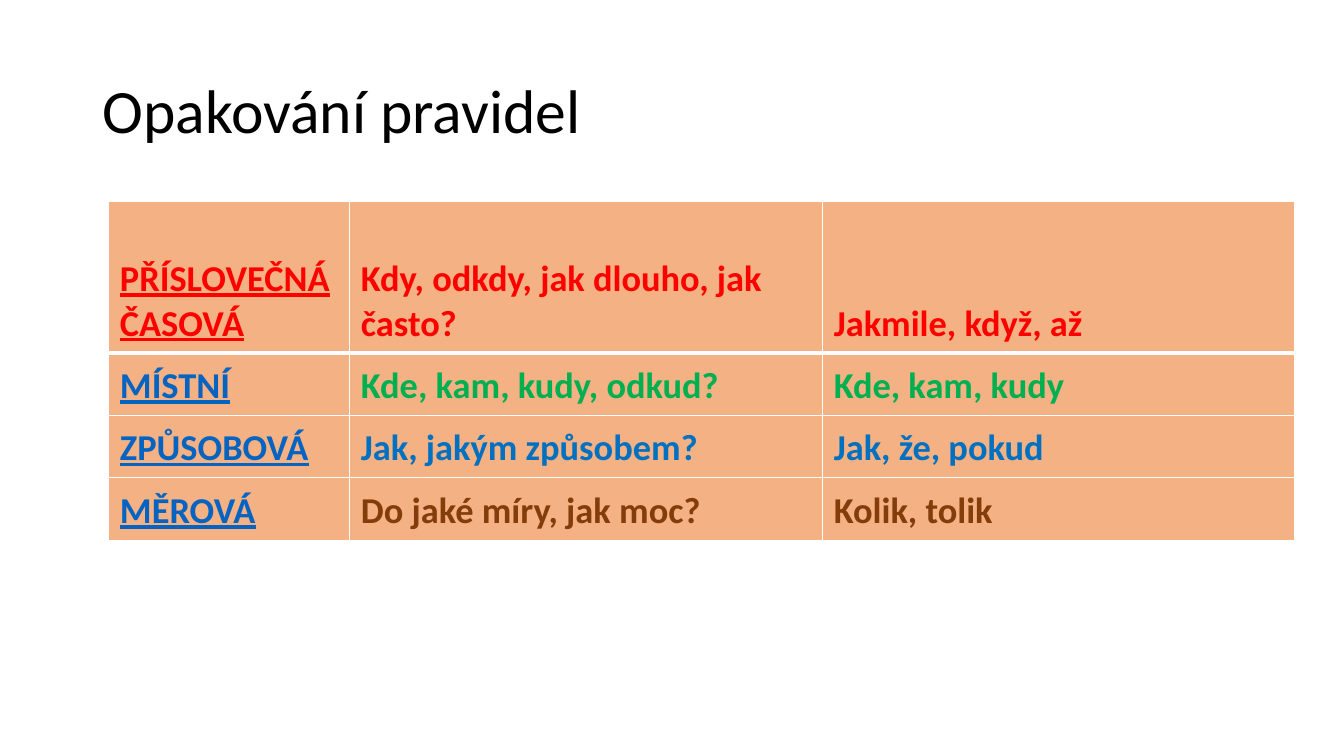
import pptx
import pptx.dml.color
import pptx.enum.text
import pptx.oxml.ns
import pptx.util
import lxml.etree

PX = 9144
THEME = {
    "font": "Calibri",
    "title_size": 44,
    "table_size": 26,
    "title": "000000",
    "cell": "F4B183",
    "border": "FFFFFF",
    "time": "FF0000",
    "link": "0563C1",
    "place": "00B050",
    "manner": "0070C0",
    "degree": "843C0B",
}
RULES = [
    ("PŘÍSLOVEČNÁ\nČASOVÁ", "Kdy, odkdy, jak dlouho, jak často?", "Jakmile, když, až", "time", "time"),
    ("MÍSTNÍ", "Kde, kam, kudy, odkud?", "Kde, kam, kudy", "link", "place"),
    ("ZPŮSOBOVÁ", "Jak, jakým způsobem?", "Jak, že, pokud", "link", "manner"),
    ("MĚROVÁ", "Do jaké míry, jak moc?", "Kolik, tolik", "link", "degree"),
]
COLUMN_WIDTHS = [239, 469, 468]
ROW_HEIGHTS = [150, 62, 62, 62]
MARGINS = {"margin_left": 11, "margin_top": 7, "margin_right": 11, "margin_bottom": 7}


def write_text(text_frame, text, color, **format_values):
    text_frame.text = text
    for paragraph in text_frame.paragraphs:
        font = paragraph.runs[0].font
        font.color.rgb = pptx.dml.color.RGBColor.from_string(THEME[color])
        for name, value in {"name": THEME["font"], **format_values}.items():
            setattr(font, name, value)


def add_border(cell, side, points):
    properties = cell._tc.get_or_add_tcPr()
    line = lxml.etree.SubElement(properties, pptx.oxml.ns.qn("a:" + side), w=str(pptx.util.Pt(points)))
    fill = lxml.etree.SubElement(line, pptx.oxml.ns.qn("a:solidFill"))
    lxml.etree.SubElement(fill, pptx.oxml.ns.qn("a:srgbClr"), val=THEME["border"])


presentation = pptx.Presentation()
presentation.slide_width = 1333 * PX
presentation.slide_height = 750 * PX
slide = presentation.slides.add_slide(presentation.slide_layouts[6])

title = slide.shapes.add_textbox(92 * PX, 40 * PX, 1150 * PX, 145 * PX)
title.text_frame.word_wrap = True
title.text_frame.vertical_anchor = pptx.enum.text.MSO_ANCHOR.MIDDLE
write_text(title.text_frame, "Opakování pravidel", "title", size=pptx.util.Pt(THEME["title_size"]))
title.text_frame.paragraphs[0].line_spacing = 0.9

table = slide.shapes.add_table(
    len(RULES), len(COLUMN_WIDTHS), 108 * PX, 200 * PX, sum(COLUMN_WIDTHS) * PX, sum(ROW_HEIGHTS) * PX
).table
table.first_row = False
table.horz_banding = False
for column, width in zip(table.columns, COLUMN_WIDTHS):
    column.width = width * PX
for row, height in zip(table.rows, ROW_HEIGHTS):
    row.height = height * PX

for row_index, (clause, question, conjunctions, clause_color, answer_color) in enumerate(RULES):
    border_widths = {
        "lnL": 1,
        "lnR": 1,
        "lnT": 3 if row_index == 1 else 1,
        "lnB": 3 if row_index == 0 else 1,
    }
    for column_index, text in enumerate((clause, question, conjunctions)):
        is_clause = column_index == 0
        cell = table.cell(row_index, column_index)
        for side, points in border_widths.items():
            add_border(cell, side, points)
        cell.fill.solid()
        cell.fill.fore_color.rgb = pptx.dml.color.RGBColor.from_string(THEME["cell"])
        cell.vertical_anchor = pptx.enum.text.MSO_ANCHOR.BOTTOM
        for name, value in MARGINS.items():
            setattr(cell, name, value * PX)
        write_text(
            cell.text_frame,
            text,
            clause_color if is_clause else answer_color,
            size=pptx.util.Pt(THEME["table_size"]),
            bold=True,
            underline=is_clause,
        )

presentation.save("out.pptx")
